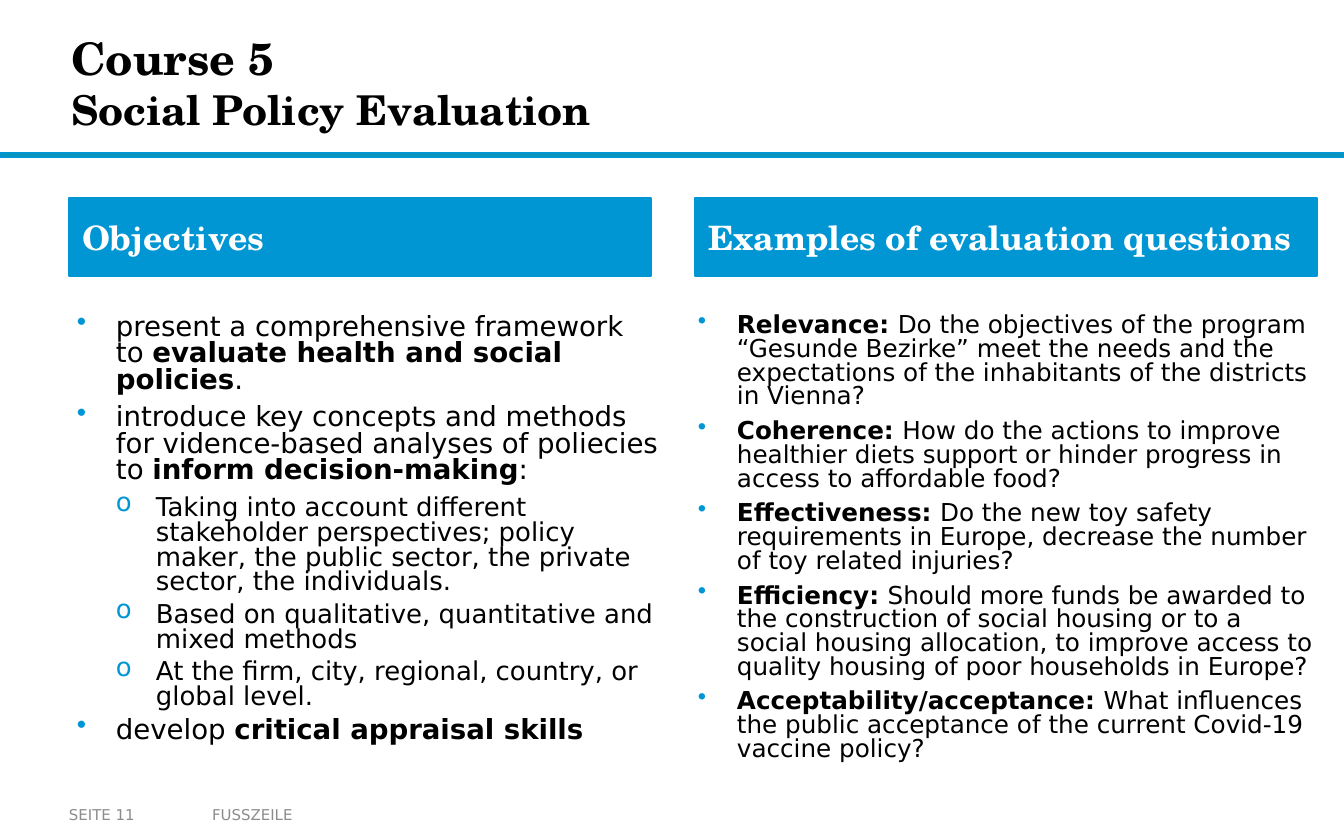
import pptx
import pptx.util
import pptx.dml.color
import pptx.enum.shapes
import pptx.enum.text
import pptx.oxml
import pptx.oxml.ns

EMU_PER_PX = 914400 / 134.4
BLUE = pptx.dml.color.RGBColor(0x00, 0x96, 0xD3)
TEAL = pptx.dml.color.RGBColor(0x0C, 0x94, 0xB7)
BLACK = pptx.dml.color.RGBColor(0x00, 0x00, 0x00)
WHITE = pptx.dml.color.RGBColor(0xFF, 0xFF, 0xFF)
GREY = pptx.dml.color.RGBColor(0x8C, 0x8C, 0x8C)
SANS = "DejaVu Sans"
SERIF = "TeX Gyre Schola"
MIDDLE = pptx.enum.text.MSO_ANCHOR.MIDDLE

OBJECTIVES = [
    (0, "present a comprehensive framework to **evaluate health and social policies**."),
    (0, "introduce key concepts and methods for vidence-based analyses of poliecies to "
        "**inform decision-making**:"),
    (1, "Taking into account different stakeholder perspectives; policy maker, "
        "the public sector, the private sector, the individuals."),
    (1, "Based on qualitative, quantitative and mixed methods"),
    (1, "At the firm, city, regional, country, or global level."),
    (0, "develop **critical appraisal skills**"),
]
QUESTIONS = [
    (0, "**Relevance: **Do the objectives of the program “Gesunde Bezirke” meet the needs "
        "and the expectations of the inhabitants of the districts in Vienna?"),
    (0, "**Coherence: **How do the actions to improve healthier diets support or hinder "
        "progress in access to affordable food?"),
    (0, "**Effectiveness: **Do the new toy safety requirements in Europe, decrease the "
        "number of toy related injuries?"),
    (0, "**Efficiency: **Should more funds be awarded to the construction of social housing "
        "or to a social housing allocation, to improve access to quality housing of poor "
        "households in Europe?"),
    (0, "**Acceptability/acceptance: **What influences the public acceptance of the current "
        "Covid-19 vaccine policy?"),
]


def px(n):
    return pptx.util.Emu(round(n * EMU_PER_PX))


class Deck:
    levels = [("•", 39, 39, 6), ("o", 79, 40, 4)]

    def __init__(self, width, height):
        self.prs = pptx.Presentation()
        self.prs.slide_width, self.prs.slide_height = px(width), px(height)
        self.slide = self.prs.slides.add_slide(self.prs.slide_layouts[6])

    def font(self, target, size, name, color, bold=None):
        target.font.size = pptx.util.Pt(size)
        target.font.name = name
        target.font.color.rgb = color
        target.font.bold = bold

    def frame(self, sp, side=0, edge=7, anchor=MIDDLE):
        tf = sp.text_frame
        tf.word_wrap = True
        tf.margin_left = tf.margin_right = px(side)
        tf.margin_top = tf.margin_bottom = px(edge)
        tf.vertical_anchor = anchor
        return tf

    def bar(self, x, y, w, h, fill):
        kind = pptx.enum.shapes.MSO_SHAPE.RECTANGLE
        sp = self.slide.shapes.add_shape(kind, px(x), px(y), px(w), px(h))
        sp.shadow.inherit = False
        sp.fill.solid()
        sp.fill.fore_color.rgb = fill
        sp.line.color.rgb = BLUE
        sp.line.width = pptx.util.Pt(1)
        return sp

    def box(self, x, y, w, h):
        return self.slide.shapes.add_textbox(px(x), px(y), px(w), px(h))

    def title(self, x, y, w, h, lines):
        p = self.frame(self.box(x, y, w, h), edge=0).paragraphs[0]
        for i, (text, size) in enumerate(lines):
            if i:
                p.add_line_break()
            r = p.add_run()
            r.text = text
            self.font(r, size, SERIF, BLACK, True)

    def heading(self, x, y, w, h, text):
        p = self.frame(self.bar(x, y, w, h, BLUE), side=13).paragraphs[0]
        p.text = text
        p.alignment = pptx.enum.text.PP_ALIGN.LEFT
        self.font(p, 18, SERIF, WHITE, True)

    def footer(self, x, y, w, h, text, side):
        p = self.frame(self.box(x, y, w, h), side=side).paragraphs[0]
        p.text = text
        self.font(p, 8, SANS, GREY)

    def bullet(self, p, level):
        char, left, hang, after = self.levels[level]
        p.level = level
        pPr = p._p.get_or_add_pPr()
        pPr.set("marL", str(px(left)))
        pPr.set("indent", str(-px(hang)))
        ns = pptx.oxml.ns.nsdecls("a")
        for xml in (f'<a:buClr {ns}><a:srgbClr val="{BLUE}"/></a:buClr>',
                    f'<a:buChar {ns} char="{char}"/>'):
            pPr.append(pptx.oxml.parse_xml(xml))
        p.line_spacing = 0.8
        p.space_after = pptx.util.Pt(after)

    def bullets(self, x, y, w, h, items, sizes):
        tf = self.frame(self.box(x, y, w, h), anchor=pptx.enum.text.MSO_ANCHOR.TOP)
        for i, (level, text) in enumerate(items):
            p = tf.add_paragraph() if i else tf.paragraphs[0]
            self.bullet(p, level)
            self.font(p, sizes[level], SANS, BLACK)
            for j, part in enumerate(text.split("**")):
                if part:
                    r = p.add_run()
                    r.text = part
                    r.font.bold = j % 2 == 1


def main():
    deck = Deck(1344, 840)
    deck.bar(0, 153, 1344, 4, TEAL)
    deck.title(71, 16, 1016, 133, [("Course 5", 24), ("Social Policy Evaluation", 22)])
    deck.heading(69, 198, 582, 78, "Objectives")
    deck.heading(695, 198, 622, 78, "Examples of evaluation questions")
    deck.bullets(77, 308, 582, 491, OBJECTIVES, (14.8, 13.9))
    deck.bullets(698, 308, 620, 491, QUESTIONS, (13.2,))
    deck.footer(69, 796, 131, 38, "SEITE 11", 0)
    deck.footer(199, 796, 473, 38, "FUSSZEILE", 13)
    deck.prs.save("out.pptx")


if __name__ == "__main__":
    main()
